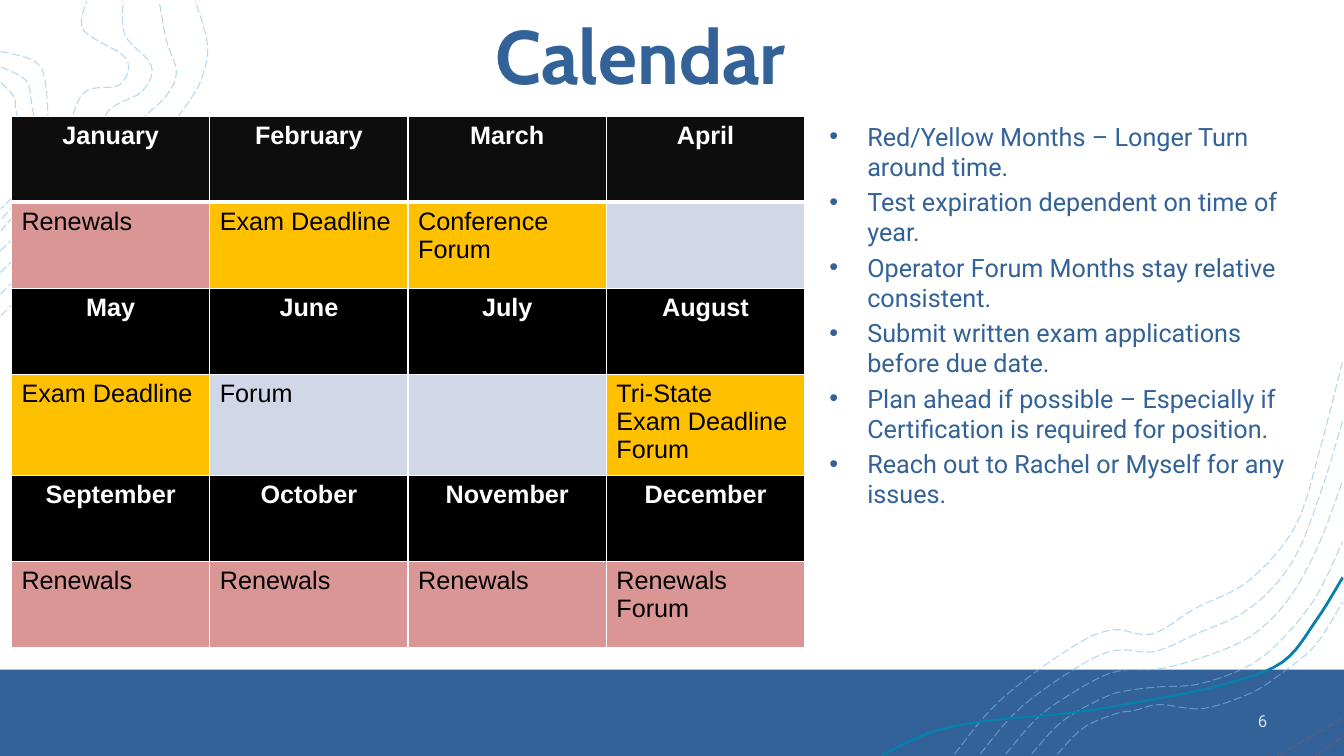
from dataclasses import dataclass

from lxml import etree
from pptx import Presentation
from pptx import util as u
from pptx.dml.color import RGBColor
from pptx.enum import dml, shapes, text
from pptx.oxml import ns


@dataclass(frozen=True)
class Theme:
    blue: str = "326297"
    white: str = "FFFFFF"
    black: str = "000000"
    header: str = "0D0D0D"
    renewal: str = "D99694"
    deadline: str = "FFC000"
    quiet: str = "D0D8E8"
    contour: str = "7FBDE8"
    accent: str = "C0504D"
    ribbon: str = "0880AD"
    title_size: int = 54
    body_size: int = 18
    number_size: int = 12


THEME = Theme()
GRID = 72  # contour coordinates count in steps of 72 points

# Outermost and innermost contour of each family; the rest lie evenly between
SLOPE = (
    [(9.47, 7.48), (9.92, 6.95), (10.62, 6.43), (11.03, 6.25), (11.43, 6.29),
     (11.85, 6.04), (12.39, 5.76), (12.85, 5.22), (13.1, 4.44), (13.32, 3.58)],
    [(10.49, 7.48), (10.75, 7.22), (11.07, 7.08), (11.25, 7.05), (11.51, 6.99),
     (11.93, 7.03), (12.4, 6.88), (12.7, 6.69), (13.05, 6.4), (13.32, 5.97)])
RIDGE = (
    [(0.01, 3.13), (0.56, 2.61), (1.08, 2.3), (1.36, 1.9), (1.54, 1.47),
     (1.86, 1.03), (2, 0.78), (2.06, 0.45), (1.94, 0.01)],
    [(0, 2.49), (0.29, 2.2), (0.58, 1.74), (0.71, 1.18), (0.86, 0.9),
     (1.19, 0.84), (1.25, 0.58), (0.83, 0.3), (0.86, 0.01)])
HILL = (
    [(0.01, 0.51), (0.36, 0.62), (0.46, 0.89), (0.47, 1.44), (0.4, 1.8), (0.01, 2.29)],
    [(0.01, 0.82), (0.14, 0.96), (0.16, 1.1), (0.25, 1.5), (0.19, 1.86), (0.01, 2.07)])
CORNER = ([(12.67, 7.5), (13.31, 7.13)], [(13.05, 7.5), (13.33, 7.3)])
RIBBON_EDGE = [
    (13.33, 5.74), (13.07, 6.16), (12.73, 6.58), (12.15, 6.8), (11.44, 6.95),
    (10.65, 7.08), (9.82, 7.16), (9.26, 7.27), (8.76, 7.5)]

RENEWALS, EXAM, FORUM = "Renewals", "Exam Deadline", "Forum"
CALENDAR = [
    [("January", RENEWALS), ("February", EXAM), ("March", f"Conference\n{FORUM}"), ("April", "")],
    [("May", EXAM), ("June", FORUM), ("July", ""), ("August", f"Tri-State\n{EXAM}\n{FORUM}")],
    [("September", RENEWALS), ("October", RENEWALS), ("November", RENEWALS),
     ("December", f"{RENEWALS}\n{FORUM}")],
]
ADVICE = [
    "Red/Yellow Months – Longer Turn around time.",
    "Test expiration dependent on time of year.",
    "Operator Forum Months stay relative consistent.",
    "Submit written exam applications before due date.",
    "Plan ahead if possible – Especially if Certification is required for position.",
    "Reach out to Rachel or Myself for any issues.",
]


def set_alpha(element, percent):
    for color in element.iter(ns.qn("a:srgbClr")):
        etree.SubElement(color, ns.qn("a:alpha"), val=str(percent * 1000))


def write(frame, content, *, size, font, color, bold=False, align=None, bullet=False,
          gap=0, alpha=None):
    """Write one paragraph per line of content."""
    for index, line in enumerate(content.split("\n")):
        para = frame.paragraphs[0] if index == 0 else frame.add_paragraph()
        if bullet:
            props = para._p.get_or_add_pPr()
            props.set("marL", str(u.Pt(27)))
            props.set("indent", str(-u.Pt(27)))
            etree.SubElement(props, ns.qn("a:buFont"), typeface="Arial")
            etree.SubElement(props, ns.qn("a:buChar"), char="•")
        para.alignment = align
        if index and gap:
            para.space_before = u.Pt(gap)
        span = para.add_run()
        span.text = line
        span.font.size, span.font.name, span.font.bold = u.Pt(size), font, bold
        span.font.color.rgb = RGBColor.from_string(color)
        if alpha:
            set_alpha(span._r, alpha)


def add_text(page, bounds, content, anchor=text.MSO_ANCHOR.TOP, **style):
    box = page.shapes.add_textbox(*map(u.Pt, bounds))
    box.text_frame.word_wrap = True
    box.text_frame.vertical_anchor = anchor
    write(box.text_frame, content, **style)


def blend(start, end, share):
    return [tuple(a + (b - a) * share for a, b in zip(p, q)) for p, q in zip(start, end)]


def smooth(points, steps=6):
    """Pass a Catmull-Rom curve through the points."""
    ends = [points[0], *points, points[-1]]
    curve = [points[0]]
    for a, b, c, d in zip(ends, ends[1:], ends[2:], ends[3:]):
        for t in (step / steps for step in range(1, steps + 1)):
            curve.append(tuple(
                (2 * q + (r - p) * t + (2 * p - 5 * q + 4 * r - s) * t ** 2
                 + (3 * q - p - 3 * r + s) * t ** 3) / 2
                for p, q, r, s in zip(a, b, c, d)))
    return curve


def add_outline(page, points, close=False):
    start, *rest = [(u.Pt(x * GRID), u.Pt(y * GRID)) for x, y in points]
    builder = page.shapes.build_freeform(*start)
    builder.add_line_segments(rest, close=close)
    outline = builder.convert_to_shape()
    outline.shadow.inherit = False
    return outline


def add_contours(page, family, count, color=THEME.contour, alpha=60):
    for index in range(count):
        contour = add_outline(page, smooth(blend(*family, index / (count - 1))))
        contour.fill.background()
        contour.line.color.rgb = RGBColor.from_string(color)
        contour.line.width = u.Pt(0.75)
        contour.line.dash_style = dml.MSO_LINE.LONG_DASH
        set_alpha(contour._element.spPr, alpha)


def fill_plain(shape, color):
    shape.fill.solid()
    shape.fill.fore_color.rgb = RGBColor.from_string(color)
    shape.line.fill.background()


def add_ribbon(page):
    edge = smooth(RIBBON_EDGE)
    inner = [(x - 0.02, y - 0.02) for x, y in reversed(edge)]
    fill_plain(add_outline(page, edge + inner, close=True), THEME.ribbon)


def style_cell(cell, content, fill, bottom=1, **style):
    props = cell._tc.get_or_add_tcPr()
    for side, width in (("L", 1), ("R", 1), ("T", 1), ("B", bottom)):
        border = etree.SubElement(props, ns.qn(f"a:ln{side}"), w=str(u.Pt(width)))
        paint = etree.SubElement(border, ns.qn("a:solidFill"))
        etree.SubElement(paint, ns.qn("a:srgbClr"), val=THEME.white)
    cell.fill.solid()
    cell.fill.fore_color.rgb = RGBColor.from_string(fill)
    if content:
        write(cell.text_frame, content, size=THEME.body_size, font="Arial", **style)


def event_fill(event):
    if RENEWALS in event:
        return THEME.renewal
    return THEME.deadline if EXAM in event or "Conference" in event else THEME.quiet


def add_calendar(page, left, top, column, row):
    rows, columns = 2 * len(CALENDAR), len(CALENDAR[0])
    table = page.shapes.add_table(rows, columns, u.Pt(left), u.Pt(top),
                                  u.Pt(column * columns), u.Pt(row * rows)).table
    table.horz_banding = False
    for third, months in enumerate(CALENDAR):
        first = third == 0
        for index, (month, event) in enumerate(months):
            style_cell(table.cell(2 * third, index), month,
                       THEME.header if first else THEME.black, bottom=3 if first else 1,
                       color=THEME.white, bold=True, align=text.PP_ALIGN.CENTER)
            style_cell(table.cell(2 * third + 1, index), event, event_fill(event),
                       color=THEME.black)


def main():
    deck = Presentation()
    deck.slide_width, deck.slide_height = u.Pt(960), u.Pt(540)
    page = deck.slides.add_slide(deck.slide_layouts[6])

    # Footer band and contour lines
    band = page.shapes.add_shape(shapes.MSO_SHAPE.RECTANGLE, *map(u.Pt, (0, 478.3, 960, 61.7)))
    band.shadow.inherit = False
    fill_plain(band, THEME.blue)
    for family, count in ((SLOPE, 5), (RIDGE, 4), (HILL, 3)):
        add_contours(page, family, count)
    add_contours(page, CORNER, 2, THEME.accent, 35)
    add_ribbon(page)

    # Page number and title
    middle = text.MSO_ANCHOR.MIDDLE
    add_text(page, (688.3, 500.4, 224, 28.8), "6", middle, size=THEME.number_size,
             font="Roboto", color=THEME.white, alpha=78, align=text.PP_ALIGN.RIGHT)
    add_text(page, (58.3, -5, 798.5, 87.8), "Calendar", middle, size=THEME.title_size,
             font="Cabin", color=THEME.blue, bold=True, align=text.PP_ALIGN.CENTER)

    # Calendar and advice
    add_calendar(page, left=8.2, top=83, column=141.66, row=61.5)
    add_text(page, (585.4, 82.8, 349.2, 294.5), "\n".join(ADVICE), size=THEME.body_size,
             font="Roboto", color=THEME.blue, bullet=True, gap=3.6)

    deck.save("out.pptx")


if __name__ == "__main__":
    main()
